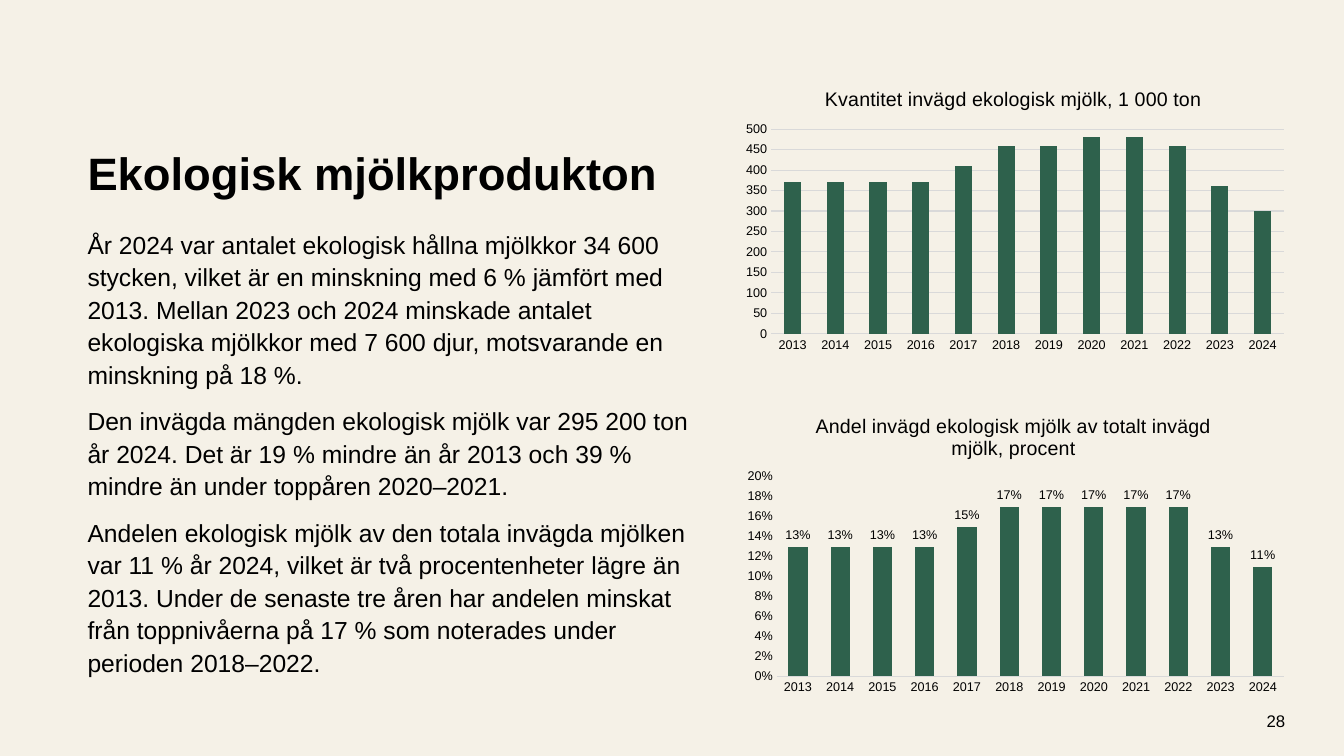
import pptx
import pptx.chart.data
import pptx.dml.color
import pptx.enum.chart
import pptx.enum.text
import pptx.oxml
import pptx.oxml.ns
import pptx.util

Pt = pptx.util.Pt
COLOURS = {"paper": "F5F1E7", "text": "000000", "bar": "2E614C", "line": "D9D9D9"}
FONT = "Arial"
YEARS = [str(year) for year in range(2013, 2025)]
QUANTITY = [370, 370, 370, 370, 410, 460, 460, 480, 480, 460, 360, 300]
SHARE = [0.13, 0.13, 0.13, 0.13, 0.15, 0.17, 0.17, 0.17, 0.17, 0.17, 0.13, 0.11]
BODY = [
    "År 2024 var antalet ekologisk hållna mjölkkor 34 600 stycken, vilket är en "
    "minskning med 6 % jämfört med 2013. Mellan 2023 och 2024 minskade antalet "
    "ekologiska mjölkkor med 7 600 djur, motsvarande en minskning på 18 %.",
    "Den invägda mängden ekologisk mjölk var 295 200 ton år 2024. Det är 19 % "
    "mindre än år 2013 och 39 % mindre än under toppåren 2020–2021.",
    "Andelen ekologisk mjölk av den totala invägda mjölken var 11 % år 2024, "
    "vilket är två procentenheter lägre än 2013. Under de senaste tre åren har "
    "andelen minskat från toppnivåerna på 17 % som noterades under perioden 2018–2022.",
]


def colour(name):
    return pptx.dml.color.RGBColor.from_string(COLOURS[name])


def style_font(font, size, bold=False):
    font.name = FONT
    font.size = Pt(size)
    font.bold = bold
    font.color.rgb = colour("text")


def add_text(page, paragraphs, left, top, width, height, size, bold=False,
             line_spacing=1.0, gap=0, align=pptx.enum.text.PP_ALIGN.LEFT,
             anchor=pptx.enum.text.MSO_ANCHOR.TOP):
    box = page.shapes.add_textbox(Pt(left), Pt(top), Pt(width), Pt(height))
    frame = box.text_frame
    frame.word_wrap = True
    frame.vertical_anchor = anchor
    for index, text in enumerate(paragraphs):
        para = frame.add_paragraph() if index else frame.paragraphs[0]
        para.alignment = align
        para.line_spacing = line_spacing
        para.space_before = Pt(gap if index else 0)
        span = para.add_run()
        span.text = text
        style_font(span.font, size, bold)


def place_plot(chart, **fractions):
    """Fix the inner plot area at x, y, w and h, as fractions of the chart."""
    area = chart.plots[0]._element.getparent()
    for layout in area.findall(pptx.oxml.ns.qn("c:layout")):
        area.remove(layout)
    sizes = "".join(f'<c:{key} val="{value}"/>' for key, value in fractions.items())
    area.insert(0, pptx.oxml.parse_xml(
        f'<c:layout {pptx.oxml.ns.nsdecls("c")}><c:manualLayout>'
        '<c:layoutTarget val="inner"/><c:xMode val="edge"/><c:yMode val="edge"/>'
        f'{sizes}</c:manualLayout></c:layout>'))


def style_line(line):
    line.color.rgb = colour("line")
    line.width = Pt(0.75)


def add_columns(page, title, values, top, height, maximum, step, number_format,
                gap_width, plot_area, grid=False, labels=False):
    kinds = pptx.enum.chart
    data = pptx.chart.data.CategoryChartData(number_format=number_format)
    data.categories = YEARS
    data.add_series(title, values)
    chart = page.shapes.add_chart(kinds.XL_CHART_TYPE.COLUMN_CLUSTERED, Pt(522.72),
                                  Pt(top), Pt(402.48), Pt(height), data).chart
    style_font(chart.font, 10)
    chart.has_legend = False
    chart.has_title = True
    chart.chart_title.include_in_layout = False
    span = chart.chart_title.text_frame.paragraphs[0].add_run()
    span.text = title
    style_font(span.font, 14)

    for axis in (chart.category_axis, chart.value_axis):
        axis.major_tick_mark = axis.minor_tick_mark = kinds.XL_TICK_MARK.NONE
        style_font(axis.tick_labels.font, 9)
    style_line(chart.category_axis.format.line)
    scale = chart.value_axis
    scale.format.line.fill.background()
    scale.minimum_scale, scale.maximum_scale, scale.major_unit = 0, maximum, step
    scale.tick_labels.number_format = number_format
    scale.tick_labels.number_format_is_linked = False
    scale.has_major_gridlines = grid
    if grid:
        style_line(scale.major_gridlines.format.line)

    plot = chart.plots[0]
    plot.vary_by_categories = False
    plot.gap_width, plot.overlap = gap_width, -27
    bars = plot.series[0].format.fill
    bars.solid()
    bars.fore_color.rgb = colour("bar")
    if labels:
        plot.has_data_labels = True
        marks = plot.data_labels
        marks.show_value = True
        marks.number_format = number_format
        marks.number_format_is_linked = False
        marks.position = kinds.XL_LABEL_POSITION.OUTSIDE_END
        style_font(marks.font, 9)
    place_plot(chart, **plot_area)


def main():
    deck = pptx.Presentation()
    deck.slide_width, deck.slide_height = Pt(960), Pt(540)
    page = deck.slides.add_slide(deck.slide_layouts[6])
    page.background.fill.solid()
    page.background.fill.fore_color.rgb = colour("paper")

    add_text(page, ["Ekologisk mjölkprodukton"], 55.44, 104.4, 424, 54, 32.4,
             bold=True, line_spacing=0.9)
    add_text(page, BODY, 55.44, 158.4, 444.24, 342, 17.6, line_spacing=1.1, gap=10)
    add_text(page, ["28"], 841.68, 500.4, 83.52, 28.8, 12,
             align=pptx.enum.text.PP_ALIGN.RIGHT, anchor=pptx.enum.text.MSO_ANCHOR.MIDDLE)
    add_columns(page, "Kvantitet invägd ekologisk mjölk, 1 000 ton", QUANTITY,
                51.12, 205.92, 500, 50, "0", 150,
                {"x": 0.07, "y": 0.2, "w": 0.91, "h": 0.71}, grid=True)
    add_columns(page, "Andel invägd ekologisk mjölk av totalt invägd mjölk, procent",
                SHARE, 284.4, 216, 0.2, 0.02, "0%", 120,
                {"x": 0.08, "y": 0.26, "w": 0.9, "h": 0.66}, labels=True)
    deck.save("out.pptx")


if __name__ == "__main__":
    main()
